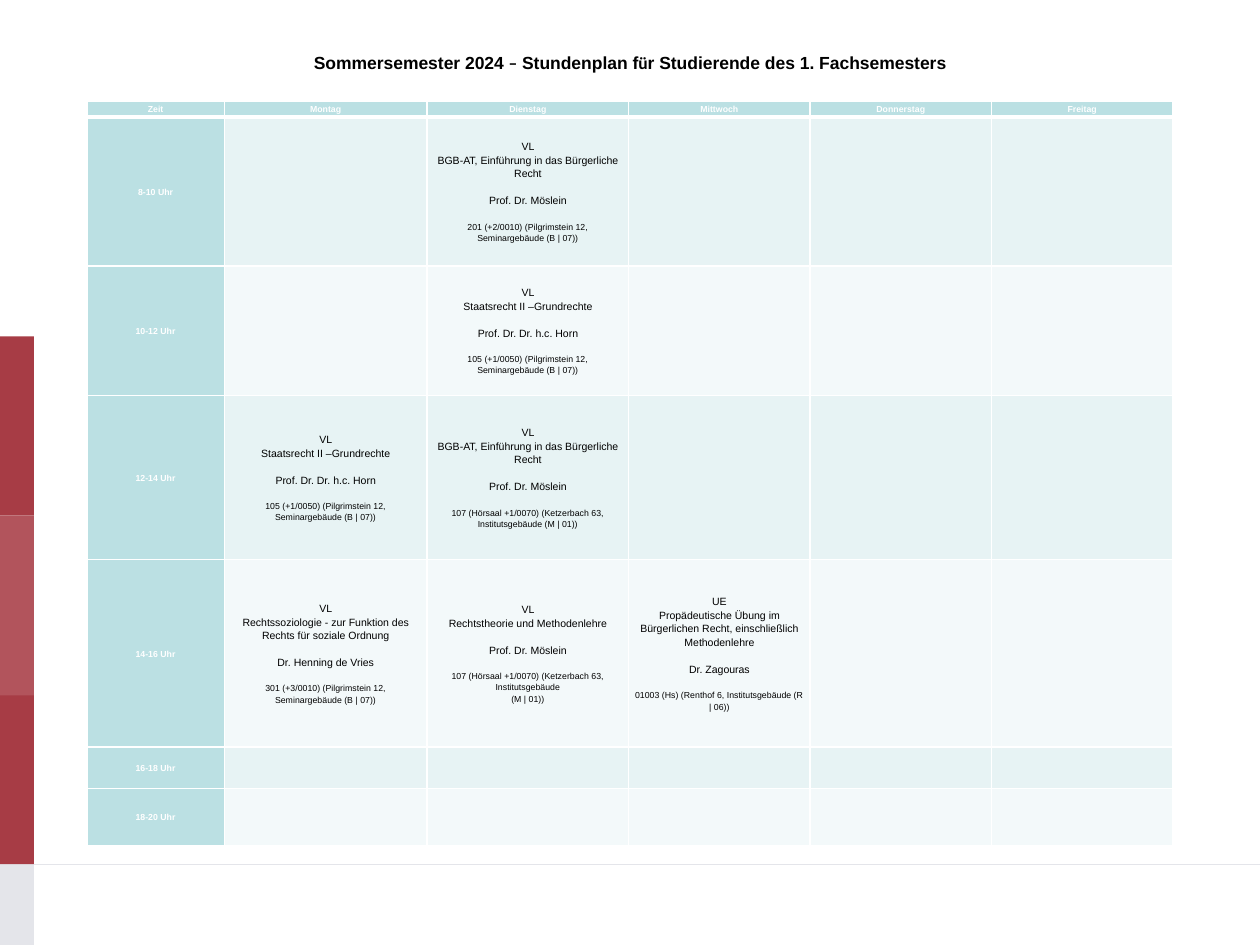
from lxml import etree
from pptx import Presentation
from pptx import util as u
from pptx.dml.color import RGBColor
from pptx.enum import shapes, text
from pptx.oxml import ns

WHITE, BLACK = "FFFFFF", "000000"
RED, LIGHT_RED, GREY = "A73C45", "B2545C", "E4E5EA"
HEADER, BANDS = "BBE0E3", ("E7F3F4", "F3F9FA")

DAYS = ["Zeit", "Montag", "Dienstag", "Mittwoch", "Donnerstag", "Freitag"]
TIMES = ["8-10 Uhr", "10-12 Uhr", "12-14 Uhr", "14-16 Uhr", "16-18 Uhr", "18-20 Uhr"]
COLUMN_WIDTHS = [1.09, 1.61, 1.6, 1.44, 1.44, 1.44]
ROW_HEIGHTS = [0.13, 1.18, 1.03, 1.3, 1.49, 0.33, 0.45]

CIVIL_LAW = "BGB-AT, Einführung in das Bürgerliche Recht"
RIGHTS = ("VL", "Staatsrecht II –Grundrechte", "Prof. Dr. Dr. h.c. Horn",
          ["105 (+1/0050) (Pilgrimstein 12, Seminargebäude (B | 07))"])
COURSES = {
    (1, 2): ("VL", CIVIL_LAW, "Prof. Dr. Möslein",
             ["201 (+2/0010) (Pilgrimstein 12,", "Seminargebäude (B | 07))"]),
    (2, 2): RIGHTS,
    (3, 1): RIGHTS,
    (3, 2): ("VL", CIVIL_LAW, "Prof. Dr. Möslein",
             ["107 (Hörsaal +1/0070) (Ketzerbach 63, Institutsgebäude (M | 01))"]),
    (4, 1): ("VL", "Rechtssoziologie - zur Funktion des Rechts für soziale Ordnung",
             "Dr. Henning de Vries",
             ["301 (+3/0010) (Pilgrimstein 12, Seminargebäude (B | 07))"]),
    (4, 2): ("VL", "Rechtstheorie und Methodenlehre", "Prof. Dr. Möslein",
             ["107 (Hörsaal +1/0070) (Ketzerbach 63, Institutsgebäude", "(M | 01))"]),
    (4, 3): ("UE", "Propädeutische Übung im Bürgerlichen Recht, einschließlich Methodenlehre",
             "Dr. Zagouras",
             ["01003 (Hs) (Renthof 6, Institutsgebäude (R | 06))"]),
}


def color(value):
    return RGBColor.from_string(value)


def write(paragraph, content, size=6, fill=BLACK, bold=False, font="Arial",
          spacing=1.15, before=0):
    paragraph.alignment = text.PP_ALIGN.CENTER
    paragraph.line_spacing = spacing
    paragraph.space_before = u.Pt(before)
    run = paragraph.add_run()
    run.text = content
    run.font.name = font
    run.font.size = u.Pt(size)
    run.font.bold = bold
    run.font.color.rgb = color(fill)


class TimetableSlide:
    gap = 7.7

    def __init__(self, presentation):
        self.slide = presentation.slides.add_slide(presentation.slide_layouts[5])

    def title(self, left, top, width, height, parts):
        shape = self.slide.shapes.title
        shape.left, shape.top = u.Inches(left), u.Inches(top)
        shape.width, shape.height = u.Inches(width), u.Inches(height)
        frame = shape.text_frame
        frame.word_wrap = False
        frame.auto_size = text.MSO_AUTO_SIZE.NONE
        frame.vertical_anchor = text.MSO_ANCHOR.MIDDLE
        for content, font in parts:
            write(frame.paragraphs[0], content, size=10, bold=True, font=font, spacing=1)

    def block(self, left, top, width, height, fill):
        shape = self.slide.shapes.add_shape(
            shapes.MSO_SHAPE.RECTANGLE, u.Inches(left), u.Inches(top),
            u.Inches(width), u.Inches(height))
        shape.shadow.inherit = False
        shape.fill.solid()
        shape.fill.fore_color.rgb = color(fill)
        shape.line.fill.background()

    def rule(self, left, top, right, fill):
        line = self.slide.shapes.add_connector(
            shapes.MSO_CONNECTOR.STRAIGHT, u.Inches(left), u.Inches(top),
            u.Inches(right), u.Inches(top))
        line.line.color.rgb = color(fill)
        line.line.width = u.Pt(0.5)
        etree.SubElement(line._element.spPr, ns.qn("a:effectLst"))

    def table(self, left, top, widths, heights):
        frame = self.slide.shapes.add_table(
            len(heights), len(widths), u.Inches(left), u.Inches(top),
            u.Inches(sum(widths)), u.Inches(sum(heights)))
        for column, width in zip(frame.table.columns, widths):
            column.width = u.Inches(width)
        for row, height in zip(frame.table.rows, heights):
            row.height = u.Inches(height)
        return frame.table

    def cell(self, cell, fill, header_row):
        cell.fill.solid()
        cell.fill.fore_color.rgb = color(fill)
        cell.vertical_anchor = text.MSO_ANCHOR.MIDDLE
        cell.margin_left = cell.margin_right = u.Inches(0.05)
        cell.margin_top = cell.margin_bottom = 0
        properties = cell._tc.get_or_add_tcPr()
        for index, side in enumerate(("lnL", "lnR", "lnT", "lnB")):
            width = 3 if header_row and side == "lnB" else 1
            border = etree.Element(ns.qn(f"a:{side}"), w=str(u.Pt(width)))
            solid = etree.SubElement(border, ns.qn("a:solidFill"))
            etree.SubElement(solid, ns.qn("a:srgbClr"), val=WHITE)
            properties.insert(index, border)

    def label(self, cell, content):
        write(cell.text_frame.paragraphs[0], content, size=5, fill=WHITE, bold=True)

    def course(self, cell, kind, name, lecturer, room):
        frame = cell.text_frame
        write(frame.paragraphs[0], kind)
        write(frame.add_paragraph(), name)
        write(frame.add_paragraph(), lecturer, before=self.gap)
        for index, line in enumerate(room):
            write(frame.add_paragraph(), line, size=5, before=0 if index else self.gap)


def main():
    presentation = Presentation()
    presentation.slide_width, presentation.slide_height = u.Inches(10), u.Inches(7.5)
    page = TimetableSlide(presentation)

    page.block(0, 2.67, 0.27, 1.42, RED)
    page.rule(0, 6.86, 10, GREY)
    page.block(0, 5.51, 0.27, 1.35, RED)
    page.block(0, 6.86, 0.27, 0.64, GREY)
    page.block(0, 4.09, 0.27, 1.43, LIGHT_RED)

    page.title(2.33, 0.36, 5.34, 0.27, [
        ("Sommersemester 2024 ", "Arial"), ("–", "Calibri"),
        (" Stundenplan f", "Arial"), ("ü", "Calibri"),
        ("r Studierende des 1. Fachsemesters", "Arial")])

    table = page.table(0.69, 0.8, COLUMN_WIDTHS, ROW_HEIGHTS)
    for row in range(len(ROW_HEIGHTS)):
        for column in range(len(COLUMN_WIDTHS)):
            cell = table.cell(row, column)
            is_label = row == 0 or column == 0
            page.cell(cell, HEADER if is_label else BANDS[(row - 1) % 2], row == 0)
            if is_label:
                page.label(cell, DAYS[column] if row == 0 else TIMES[row - 1])
            elif (row, column) in COURSES:
                page.course(cell, *COURSES[row, column])

    presentation.save("out.pptx")


if __name__ == "__main__":
    main()
